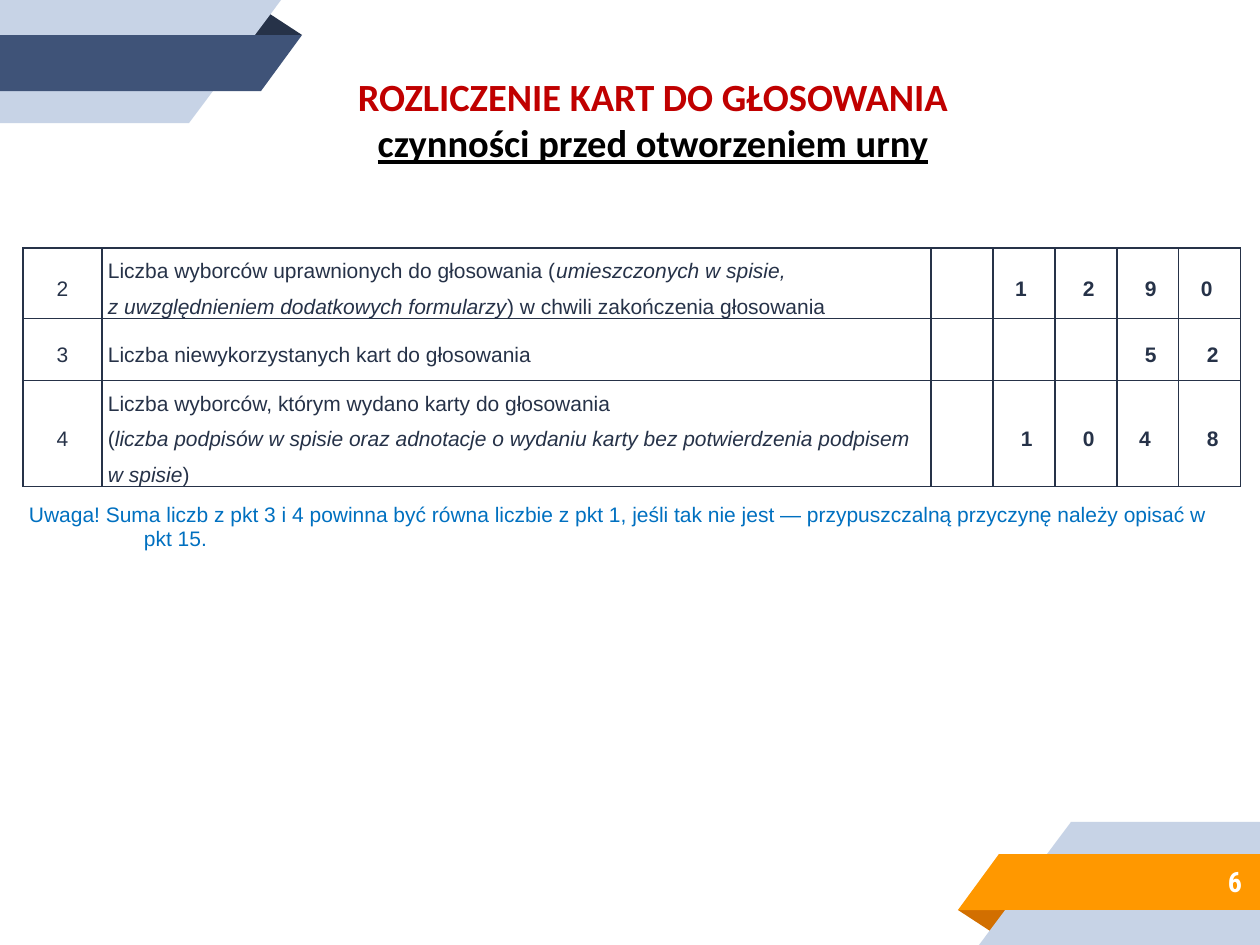
from dataclasses import dataclass

from lxml.etree import SubElement
from pptx import Presentation
from pptx.dml.color import RGBColor
from pptx.enum.shapes import MSO_SHAPE
from pptx.enum.text import MSO_ANCHOR, MSO_AUTO_SIZE, PP_ALIGN
from pptx.oxml.ns import qn
from pptx.util import Emu, Pt

PX = 7257.6  # EMU per pixel: 126 pixels to the inch
SLIDE_WIDTH, SLIDE_HEIGHT = 1260, 945


@dataclass(frozen=True)
class Theme:
    ink: str = "263248"
    navy: str = "3F5378"
    pale: str = "C7D3E6"
    orange: str = "FF9800"
    rust: str = "D26F00"
    red: str = "C00000"
    black: str = "000000"
    blue: str = "0070C0"
    white: str = "FFFFFF"
    title_font: str = "Calibri"
    body_font: str = "Arial"
    number_font: str = "Roboto Condensed"
    title_size: int = 22
    body_size: int = 12
    number_size: int = 16


THEME = Theme()
BODY = {"name": THEME.body_font, "size": THEME.body_size, "color": THEME.ink}
TITLE = {"name": THEME.title_font, "size": THEME.title_size, "bold": True}

# Each row: number, description as (text, italic) spans, five digit boxes
COUNT_ROWS = [
    ("2", [("Liczba wyborców uprawnionych do głosowania (", False),
           ("umieszczonych w spisie, \nz uwzględnieniem dodatkowych formularzy", True),
           (") w chwili zakończenia głosowania", False)],
     ["", "1 ", " 2", " 9", "0 "]),
    ("3", [("Liczba niewykorzystanych kart do głosowania", False)],
     ["", "", "", " 5", " 2"]),
    ("4", [("Liczba wyborców, którym wydano karty do głosowania\n(", False),
           ("liczba podpisów w spisie oraz adnotacje o wydaniu karty "
            "bez potwierdzenia podpisem w spisie", True),
           (")", False)],
     ["", " 1", " 0", "4 ", " 8"]),
]
NOTE = ("Uwaga! Suma liczb z pkt 3 i 4 powinna być równa liczbie z pkt 1, jeśli tak "
        "nie jest — przypuszczalną przyczynę należy opisać w pkt 15.")
COLUMN_WIDTHS = [79, 829] + [62] * 5
ROW_HEIGHTS = [70, 62, 106, 124]


def px(length):
    return Emu(round(length * PX))


def set_all(target, values):
    for name, value in values.items():
        setattr(target, name, value)


def add_span(para, text, style):
    """Append text to the paragraph; a newline becomes a line break."""
    for index, line in enumerate(text.split("\n")):
        if index:
            para.add_line_break()
        span = para.add_run()
        span.text = line
        values = {**style, "size": Pt(style["size"])}
        span.font.color.rgb = RGBColor.from_string(values.pop("color"))
        set_all(span.font, values)


def add_ribbon(slide, band, fold, at_top):
    """Draw the bottom-right ribbon, or the same one turned half round."""
    pieces = [
        (MSO_SHAPE.ISOSCELES_TRIANGLE, 958, 910, 54, 24, fold),
        (MSO_SHAPE.RECTANGLE, 1071, 822, 189, 123, THEME.pale),
        (MSO_SHAPE.RIGHT_TRIANGLE, 979, 822, 92, 123, THEME.pale),
        (MSO_SHAPE.RECTANGLE, 999, 854, 261, 56, band),
        (MSO_SHAPE.RIGHT_TRIANGLE, 958, 854, 41, 56, band),
    ]
    for kind, left, top, width, height, color in pieces:
        if at_top:
            left = SLIDE_WIDTH - left - width
            top = SLIDE_HEIGHT - top - height
        shape = slide.shapes.add_shape(kind, px(left), px(top), px(width), px(height))
        shape.shadow.inherit = False
        shape.fill.solid()
        shape.fill.fore_color.rgb = RGBColor.from_string(color)
        shape.line.fill.background()
        is_fold = kind == MSO_SHAPE.ISOSCELES_TRIANGLE
        if is_fold:
            shape.adjustments[0] = 0.32
        else:
            shape.element.spPr.find(qn("a:xfrm")).set("flipH", "1")
        shape.rotation = 180 if at_top != is_fold else 0


def format_title(slide):
    title = slide.shapes.title
    set_all(title, {"left": px(338), "top": px(67), "width": px(630), "height": px(106)})
    frame = title.text_frame
    set_all(frame, {"word_wrap": True, "vertical_anchor": MSO_ANCHOR.TOP,
                    "auto_size": MSO_AUTO_SIZE.NONE})
    lines = [("ROZLICZENIE KART DO GŁOSOWANIA", {"color": THEME.red}),
             ("czynności przed otworzeniem urny", {"color": THEME.black, "underline": True})]
    for index, (text, extra) in enumerate(lines):
        para = frame.add_paragraph() if index else frame.paragraphs[0]
        para.alignment = PP_ALIGN.CENTER
        add_span(para, text, {**TITLE, **extra})


def set_borders(cell, sides):
    """Rule the named sides of the cell and clear the others."""
    properties = cell._tc.get_or_add_tcPr()
    for index, side in enumerate("LRTB"):
        line = SubElement(properties, qn(f"a:ln{side}"), w=str(Pt(1)))
        properties.insert(index, line)
        if side in sides:
            fill = SubElement(line, qn("a:solidFill"))
            SubElement(fill, qn("a:srgbClr"), val=THEME.ink)
        else:
            SubElement(line, qn("a:noFill"))


def format_cell(cell, sides="LRTB", margin_top=0, anchor=MSO_ANCHOR.MIDDLE):
    set_all(cell, {"margin_left": px(6), "margin_right": px(6), "margin_top": px(margin_top),
                   "margin_bottom": 0, "vertical_anchor": anchor})
    cell.fill.background()
    set_borders(cell, sides)


def fill_cell(cell, spans, alignment, bold=False):
    para = cell.text_frame.paragraphs[0]
    set_all(para, {"alignment": alignment, "line_spacing": 1.5})
    for text, italic in spans:
        if text:
            add_span(para, text, {**BODY, "italic": italic, "bold": bold})


def add_count_table(slide):
    table = slide.shapes.add_table(
        len(ROW_HEIGHTS), len(COLUMN_WIDTHS), px(23), px(248),
        px(sum(COLUMN_WIDTHS)), px(sum(ROW_HEIGHTS))).table
    set_all(table, {"first_row": False, "horz_banding": False})
    for column, width in zip(table.columns, COLUMN_WIDTHS):
        column.width = px(width)
    for row, height in zip(table.rows, ROW_HEIGHTS):
        row.height = px(height)

    for row, (number, description, digits) in zip(table.rows, COUNT_ROWS):
        cells = list(row.cells)
        for cell in cells:
            format_cell(cell)
        fill_cell(cells[0], [(number, False)], PP_ALIGN.CENTER)
        fill_cell(cells[1], description, PP_ALIGN.LEFT)
        for cell, digit in zip(cells[2:], digits):
            fill_cell(cell, [(digit, False)], PP_ALIGN.CENTER, bold=True)
    add_note_row(table)


def add_note_row(table):
    last = len(ROW_HEIGHTS) - 1
    note = table.cell(last, 0)
    note.merge(table.cell(last, len(COLUMN_WIDTHS) - 1))
    for cell in table.rows[last].cells:
        format_cell(cell, sides="T", margin_top=17, anchor=MSO_ANCHOR.TOP)
    para = note.text_frame.paragraphs[0]
    hanging = px(115)
    properties = para._p.get_or_add_pPr()
    properties.set("marL", str(hanging))
    properties.set("indent", str(-hanging))
    add_span(para, NOTE, {**BODY, "color": THEME.blue})


def add_page_number(slide, number):
    box = slide.shapes.add_textbox(px(1050), px(852), px(205), px(58))
    frame = box.text_frame
    margins = {f"margin_{side}": px(13) for side in ("left", "right", "top", "bottom")}
    set_all(frame, {"word_wrap": True, "vertical_anchor": MSO_ANCHOR.MIDDLE, **margins})
    para = frame.paragraphs[0]
    para.alignment = PP_ALIGN.RIGHT
    add_span(para, number, {"name": THEME.number_font, "size": THEME.number_size,
                            "color": THEME.white, "bold": True})


def main():
    deck = Presentation()
    set_all(deck, {"slide_width": px(SLIDE_WIDTH), "slide_height": px(SLIDE_HEIGHT)})
    slide = deck.slides.add_slide(deck.slide_layouts[5])
    add_ribbon(slide, THEME.navy, THEME.ink, at_top=True)
    add_ribbon(slide, THEME.orange, THEME.rust, at_top=False)
    add_count_table(slide)
    add_page_number(slide, "6")
    format_title(slide)
    deck.save("out.pptx")


if __name__ == "__main__":
    main()
